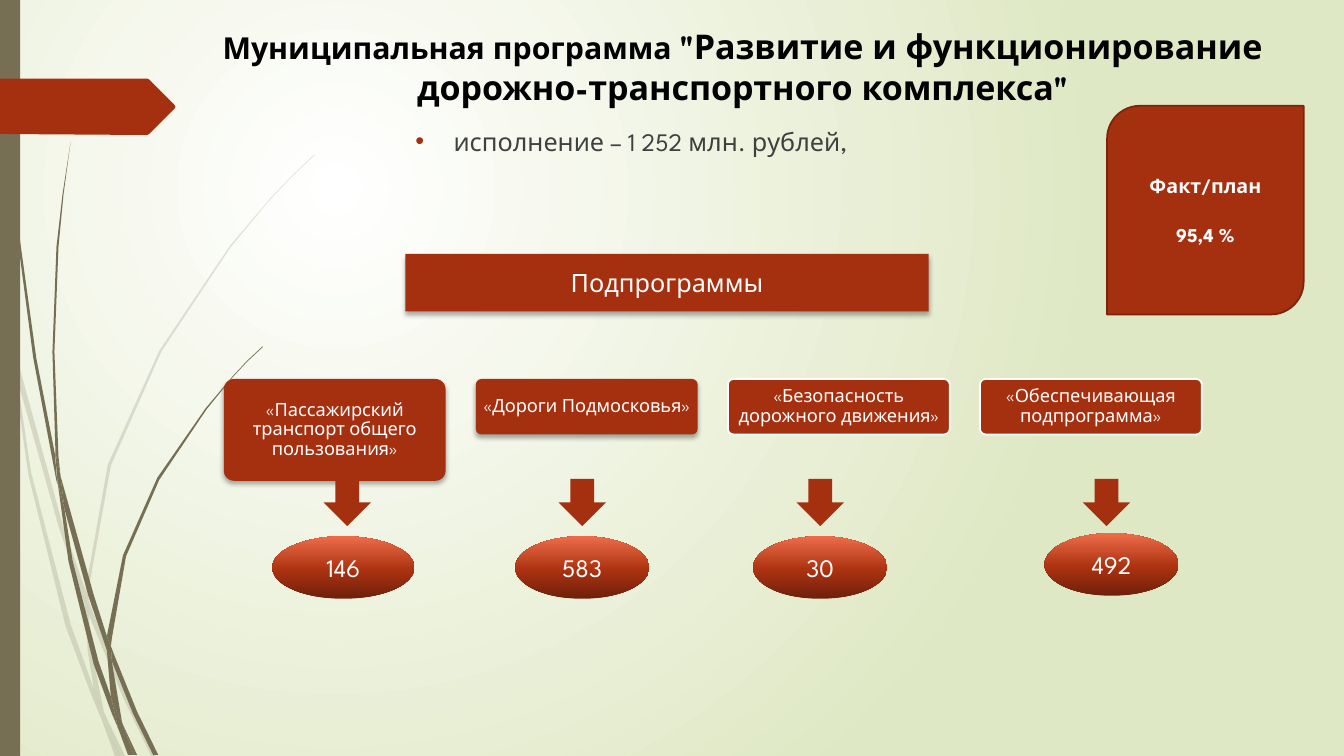
from dataclasses import dataclass
from typing import Optional

from lxml import etree
from pptx import Presentation
from pptx.dml.color import RGBColor
from pptx.enum import shapes, text
from pptx.oxml import parse_xml
from pptx.oxml.ns import nsdecls, qn
from pptx.util import Inches, Pt

Points = list[tuple[float, float]]
Box = tuple[float, float, float, float]
Stops = list[tuple[int, str]]


@dataclass(frozen=True)
class Theme:
    font: str = "League Spartan"
    rust: str = "A53010"
    rust_edge: str = "7A240C"
    olive: str = "766F54"
    white: str = "FFFFFF"
    black: str = "000000"
    grey: str = "404040"
    meadow: str = "DFE8C4"
    oval_low: str = "6F200B"
    oval_middle: str = "AE3311"
    oval_high: str = "EE6E4B"
    title_lead: float = 21.6
    title: float = 24.3
    body: float = 18
    badge: float = 14
    label: float = 13
    border: float = 1.25


@dataclass(frozen=True)
class Subprogram:
    name: str
    amount: str
    arrow_left: float
    oval_left: float
    oval_top: float = 5.32
    oval_width: float = 1.33
    card_height: float = 0.55
    raised: bool = False


THEME = Theme()
SUBPROGRAMS = [
    Subprogram("«Пассажирский транспорт общего пользования»", "146", 3.21, 2.7,
               oval_width=1.41, card_height=1.01, raised=True),
    Subprogram("«Дороги Подмосковья»", "583", 5.54, 5.11, raised=True),
    Subprogram("«Безопасность дорожного движения»", "30", 7.9, 7.47),
    Subprogram("«Обеспечивающая подпрограмма»", "492", 10.74, 10.36, oval_top=5.29),
]
PALE_GRASS: list[Points] = [
    [(0.11, 3.5), (0.09, 3.22), (0, 2.82), (0, 2.99), (0.1, 3.44)],
    [(0.58, 5.22), (0.84, 5.99), (0.85, 5.86), (0.62, 5.2), (0.14, 3.45), (0.17, 3.76)],
    [(0.92, 6.07), (0.88, 5.96), (0.88, 6.1), (1.23, 6.94), (1.5, 7.5), (1.55, 7.5),
     (1.27, 6.92)],
    [(1.19, 7.5), (1.24, 7.5), (1.05, 7.11)],
    [(0.93, 6.83), (0.7, 6.19), (0.31, 4.69), (0.17, 3.76), (0.11, 3.5), (0.28, 4.7),
     (0.65, 6.21), (0.92, 6.93), (1.01, 7.14), (0.99, 7.07)],
    [(0.84, 5.99), (0.87, 6.46), (0.93, 6.83), (0.96, 6.92), (1.05, 7.11), (1.03, 7.06),
     (0.91, 6.46), (0.88, 6.1), (0.88, 6.08)],
    [(0.88, 5.84), (1.1, 4.62), (1.6, 3.49), (2.29, 2.45), (2.68, 1.98), (2.9, 1.75),
     (3.12, 1.54), (3.12, 1.53), (2.89, 1.75), (2.68, 1.97), (2.28, 2.44), (1.58, 3.48),
     (1.07, 4.61), (0.85, 5.84), (0.85, 5.86), (0.88, 5.96)],
    [(1.01, 7.14), (1.14, 7.5), (1.19, 7.5)],
    [(0.88, 6.08), (0.88, 6.1), (0.88, 5.96), (0.85, 5.86), (0.84, 5.99)],
    [(0.96, 6.92), (0.93, 6.83), (0.99, 7.07), (1.01, 7.14), (1.19, 7.5), (1.05, 7.11)],
]
DARK_GRASS: list[Points] = [
    [(0.07, 1.1), (0.17, 2.33), (0.33, 3.55), (0.56, 4.77), (0.57, 4.81), (0.55, 4.57),
     (0.55, 4.53), (0.36, 3.55), (0.19, 2.32), (0.08, 1.09), (0.05, 0.48), (0.04, 0),
     (0.03, 0), (0.04, 0.48)],
    [(0.88, 5.92), (1.06, 6.45), (1.06, 6.31), (0.93, 5.9), (0.6, 4.72), (0.64, 5.05)],
    [(1.13, 6.49), (1.1, 6.41), (1.11, 6.56), (1.32, 7.08), (1.52, 7.49), (1.57, 7.49),
     (1.36, 7.06)],
    [(1.1, 6.91), (0.98, 6.57), (0.72, 5.56), (0.64, 5.05), (0.57, 4.77), (0.68, 5.57),
     (0.93, 6.59), (1.11, 7.08), (1.17, 7.22), (1.16, 7.17)],
    [(0.6, 4.72), (0.58, 4.53), (0.54, 3.49), (0.58, 2.45), (0.63, 1.93), (0.7, 1.41),
     (0.62, 1.93), (0.56, 2.45), (0.52, 3.49), (0.55, 4.49)],
    [(1.33, 7.49), (1.36, 7.49), (1.22, 7.19)],
    [(0.57, 4.77), (0.64, 5.05), (0.6, 4.72), (0.55, 4.49), (0.55, 4.53)],
    [(1.11, 6.33), (1.25, 5.52), (1.58, 4.76), (2.05, 4.06), (2.31, 3.74), (2.45, 3.59),
     (2.61, 3.44), (2.6, 3.44), (2.45, 3.58), (2.31, 3.73), (2.04, 4.05), (1.56, 4.74),
     (1.22, 5.51), (1.06, 6.31), (1.1, 6.41)],
    [(1.17, 7.22), (1.27, 7.49), (1.31, 7.49)],
    [(1.06, 6.45), (1.1, 6.91), (1.16, 7.06), (1.22, 7.19), (1.21, 7.16), (1.11, 6.56),
     (1.09, 6.51)],
    [(1.06, 6.45), (1.09, 6.51), (1.11, 6.56), (1.1, 6.41), (1.06, 6.31)],
    [(1.16, 7.06), (1.1, 6.91), (1.16, 7.17), (1.17, 7.22), (1.3, 7.49), (1.33, 7.49),
     (1.22, 7.19)],
]
PAGE_TAG: Points = [(0, 0.78), (1.46, 0.78), (1.48, 0.79), (1.73, 1.04), (1.74, 1.06),
                    (1.73, 1.08), (1.48, 1.33), (1.46, 1.34), (0, 1.33)]


def set_gradient(owner, stops: Stops, direction: str) -> None:
    """Rewrite the gradient found inside owner with these stops and direction element."""
    gradient = next(owner.iter(qn("a:gradFill")))
    stop_xml = "".join(f'<a:gs pos="{place * 1000}"><a:srgbClr val="{color}"/></a:gs>'
                       for place, color in stops)
    fresh = parse_xml(f'<a:gradFill {nsdecls("a")} rotWithShape="1">'
                      f"<a:gsLst>{stop_xml}</a:gsLst>{direction}</a:gradFill>")
    gradient.getparent().replace(gradient, fresh)


def add_shadow(shape) -> None:
    effects = shape.element.spPr.find(qn("a:effectLst"))
    effects.append(parse_xml(
        f'<a:outerShdw {nsdecls("a")} blurRad="{Pt(3.5)}" dist="{Pt(2.2)}" dir="5400000" '
        f'rotWithShape="0"><a:srgbClr val="{THEME.black}"><a:alpha val="32000"/>'
        "</a:srgbClr></a:outerShdw>"))


def paint(shape, color: str, border: Optional[str] = None) -> None:
    shape.shadow.inherit = False
    shape.fill.solid()
    shape.fill.fore_color.rgb = RGBColor.from_string(color)
    if border:
        shape.line.color.rgb = RGBColor.from_string(border)
        shape.line.width = Pt(THEME.border)
    else:
        shape.line.fill.background()


def add_outline(parent, points: Points, color: str, opacity: int = 100) -> None:
    hundredths = [(x * 100, y * 100) for x, y in points]
    builder = parent.build_freeform(*hundredths[0], scale=Inches(0.01))
    builder.add_line_segments(hundredths[1:], close=True)
    shape = builder.convert_to_shape()
    paint(shape, color)
    if opacity < 100:
        solid_color = next(shape.element.spPr.iter(qn("a:srgbClr")))
        etree.SubElement(solid_color, qn("a:alpha"), val=str(opacity * 1000))


def add_block(slide, kind, box: Box, color: str = THEME.rust, border: Optional[str] = None):
    shape = slide.shapes.add_shape(kind, *map(Inches, box))
    paint(shape, color, border)
    return shape


def write(paragraph, content: str, *, size: float, color: str = THEME.white,
          bold: bool = False, align=text.PP_ALIGN.CENTER) -> None:
    paragraph.alignment = align
    run = paragraph.add_run()
    run.text = content
    run.font.name = THEME.font
    run.font.size = Pt(size)
    run.font.bold = bold
    run.font.color.rgb = RGBColor.from_string(color)


def set_frame(frame, anchor, inset: Optional[float] = None) -> None:
    frame.word_wrap = True
    frame.vertical_anchor = anchor
    if inset is not None:
        frame.margin_left = frame.margin_right = Inches(inset)
        frame.margin_top = frame.margin_bottom = Inches(inset)


def add_backdrop(slide) -> None:
    slide.background.fill.gradient()
    set_gradient(slide.element, [(0, THEME.white), (100, THEME.meadow)],
                 '<a:path path="circle"><a:fillToRect l="50000" t="50000" '
                 'r="100000" b="100000"/></a:path>')
    for blades, opacity in ((PALE_GRASS, 20), (DARK_GRASS, 100)):
        group = slide.shapes.add_group_shape()
        for blade in blades:
            add_outline(group.shapes, blade, THEME.olive, opacity)
    add_block(slide, shapes.MSO_SHAPE.RECTANGLE, (0, 0, 0.2, 7.5), THEME.olive)
    add_outline(slide.shapes, PAGE_TAG, THEME.rust)


def add_title(slide) -> None:
    title = slide.shapes.title
    title.left, title.top, title.width, title.height = map(Inches, (1.95, 0.2, 10.83, 0.85))
    set_frame(title.text_frame, text.MSO_ANCHOR.TOP)
    paragraph = title.text_frame.paragraphs[0]
    write(paragraph, "Муниципальная программа ", size=THEME.title_lead,
          color=THEME.black, bold=True)
    write(paragraph, '"Развитие и функционирование дорожно-транспортного комплекса"',
          size=THEME.title, color=THEME.black, bold=True)


def add_spending(slide) -> None:
    box = slide.shapes.add_textbox(*map(Inches, (4.02, 1.2, 5.22, 1.7)))
    set_frame(box.text_frame, text.MSO_ANCHOR.TOP)
    paragraph = box.text_frame.paragraphs[0]
    properties = paragraph._p.get_or_add_pPr()
    properties.set("marL", str(Inches(0.38)))
    properties.set("indent", str(-Inches(0.38)))
    bullet_color = etree.SubElement(properties, qn("a:buClr"))
    etree.SubElement(bullet_color, qn("a:srgbClr"), val=THEME.rust)
    etree.SubElement(properties, qn("a:buFont"), typeface="Arial")
    etree.SubElement(properties, qn("a:buChar"), char="•")
    write(paragraph, "исполнение – 1 252 млн. рублей,", size=THEME.body,
          color=THEME.grey, align=text.PP_ALIGN.LEFT)


def add_subprogram(slide, item: Subprogram, card_left: float) -> None:
    card = add_block(slide, shapes.MSO_SHAPE.ROUNDED_RECTANGLE,
                     (card_left, 3.76, 2.2, item.card_height),
                     border=None if item.raised else THEME.white)
    card.adjustments[0] = 0.1
    if item.raised:
        add_shadow(card)
    set_frame(card.text_frame, text.MSO_ANCHOR.MIDDLE, inset=0.03)
    paragraph = card.text_frame.paragraphs[0]
    paragraph.line_spacing = 0.9
    write(paragraph, item.name, size=THEME.label)

    add_block(slide, shapes.MSO_SHAPE.DOWN_ARROW, (item.arrow_left, 4.75, 0.47, 0.47))
    oval = add_block(slide, shapes.MSO_SHAPE.OVAL,
                     (item.oval_left, item.oval_top, item.oval_width, 0.62))
    oval.fill.gradient()
    set_gradient(oval.element, [(0, THEME.oval_low), (48, THEME.oval_middle),
                                (100, THEME.oval_high)], '<a:lin ang="16200000" scaled="0"/>')
    set_frame(oval.text_frame, text.MSO_ANCHOR.MIDDLE)
    write(oval.text_frame.paragraphs[0], item.amount, size=THEME.body)


def add_badge(slide) -> None:
    badge = add_block(slide, shapes.MSO_SHAPE.ROUND_2_DIAG_RECTANGLE,
                      (10.98, 1.05, 1.95, 2.07), border=THEME.rust_edge)
    set_frame(badge.text_frame, text.MSO_ANCHOR.MIDDLE)
    write(badge.text_frame.paragraphs[0], "Факт/план", size=THEME.badge, bold=True)
    share = badge.text_frame.add_paragraph()
    share.space_before = Pt(18)
    write(share, "95,4 %", size=THEME.badge, bold=True)


def main() -> None:
    presentation = Presentation()
    presentation.slide_width, presentation.slide_height = Inches(13.33), Inches(7.5)
    slide = presentation.slides.add_slide(presentation.slide_layouts[5])
    add_backdrop(slide)
    add_title(slide)
    add_spending(slide)
    header = add_block(slide, shapes.MSO_SHAPE.RECTANGLE, (4.02, 2.52, 5.19, 0.57))
    add_shadow(header)
    set_frame(header.text_frame, text.MSO_ANCHOR.MIDDLE)
    write(header.text_frame.paragraphs[0], "Подпрограммы", size=THEME.body)
    for index, item in enumerate(SUBPROGRAMS):
        add_subprogram(slide, item, card_left=2.22 + 2.5 * index)
    add_badge(slide)
    presentation.save("out.pptx")


if __name__ == "__main__":
    main()
